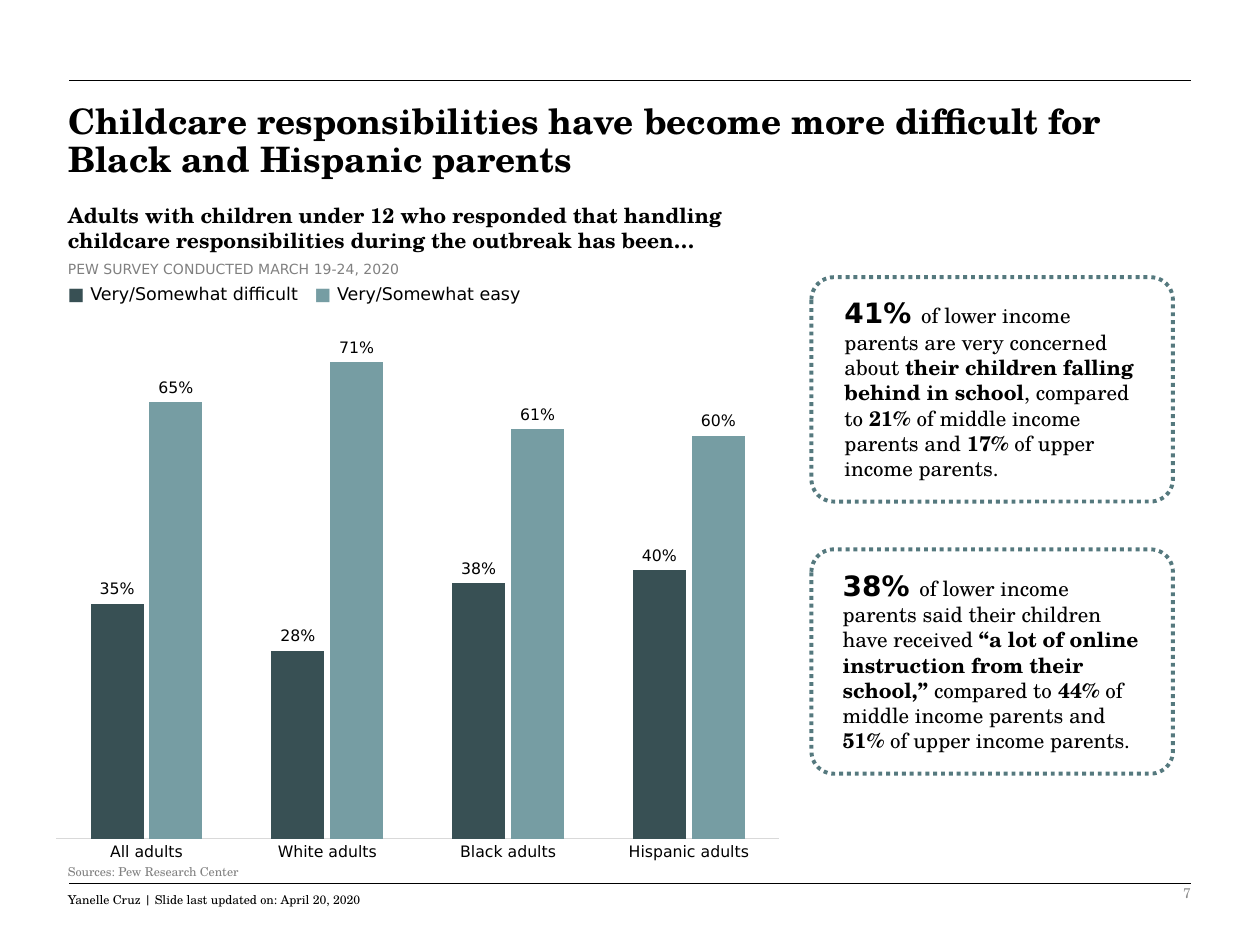
from lxml import etree
from pptx import Presentation
from pptx.chart.data import CategoryChartData
from pptx.dml.color import RGBColor
from pptx.enum.chart import XL_CHART_TYPE, XL_LABEL_POSITION, XL_TICK_MARK
from pptx.enum.dml import MSO_LINE
from pptx.enum.shapes import MSO_CONNECTOR, MSO_SHAPE
from pptx.enum.text import MSO_ANCHOR, MSO_AUTO_SIZE, PP_ALIGN
from pptx.oxml import parse_xml
from pptx.oxml.ns import nsdecls, qn
from pptx.util import Pt

COLUMNS = XL_CHART_TYPE.COLUMN_CLUSTERED
OUTSIDE = XL_LABEL_POSITION.OUTSIDE_END
NO_TICK = XL_TICK_MARK.NONE
DOTTED = MSO_LINE.ROUND_DOT
STRAIGHT = MSO_CONNECTOR.STRAIGHT
ROUNDED = MSO_SHAPE.ROUNDED_RECTANGLE
TOP, MIDDLE, BOTTOM = MSO_ANCHOR.TOP, MSO_ANCHOR.MIDDLE, MSO_ANCHOR.BOTTOM
LEFT, RIGHT = PP_ALIGN.LEFT, PP_ALIGN.RIGHT

# Theme: run styles are (font, size, colour, bold)
SERIF, SANS = "TeX Gyre Schola", "DejaVu Sans"
THEME = {
    "dark": "385054", "light": "769DA3", "border": "55797E",
    "black": "000000", "axis": "D9D9D9",
    "title": (SERIF, 20, "000000", True),
    "heading": (SERIF, 12, "000000", True),
    "body": (SERIF, 12, "000000", False),
    "figure": (SANS, 16, "000000", True),
    "survey": (SANS, 8, "808080", False),
    "legend": (SANS, 10, "000000", False),
    "dark key": (SANS, 10, "385054", True),
    "light key": (SANS, 10, "769DA3", True),
    "chart": (SANS, 9, "000000", False),
    "footer": (SERIF, 7, "000000", False),
    "source": (SERIF, 7, "808080", False),
    "number": (SERIF, 8, "8C8C8C", False),
}

# Content: runs are (text, style)
TITLE = [("Childcare responsibilities have become more difficult for "
          "Black and Hispanic parents", "title")]
HEADING = [("Adults with children under 12 who responded that handling childcare "
            "responsibilities during the outbreak has been…", "heading")]
SURVEY = [("PEW SURVEY CONDUCTED MARCH 19-24, 2020", "survey")]
LEGEND = [("■ ", "dark key"), ("Very/Somewhat difficult\t", "legend"),
          ("■ ", "light key"), ("Very/Somewhat easy", "legend")]
SOURCE = [("Sources: Pew Research Center", "source")]
FOOTER = [("Yanelle Cruz | Slide last updated on: April 20, 2020", "footer")]
NUMBER = [("7", "number")]

GROUPS = ["All adults", "White adults", "Black adults", "Hispanic adults"]
SERIES = [
    ("Series 1", "dark", [0.35, 0.28, 0.38, 0.40]),
    ("Series 2", "light", [0.65, 0.71, 0.61, 0.60]),
]
CALLOUTS = [  # text width, runs
    (183, [("41% ", "figure"),
           ("of lower income parents are very concerned about ", "body"),
           ("their children falling behind in school", "heading"),
           (", compared to ", "body"), ("21%", "heading"),
           (" of middle income parents and ", "body"), ("17%", "heading"),
           (" of upper income parents.", "body")]),
    (185, [("38% ", "figure"),
           ("of lower income parents said their children have received ", "body"),
           ("“a lot of online instruction from their school,” ", "heading"),
           ("compared to ", "body"), ("44%", "heading"),
           (" of middle income parents and ", "body"), ("51%", "heading"),
           (" of upper income parents.", "body")]),
]

# Layout, in points
EDGE = 31.7
RULE_X, RULE_YS = (39.6, 680.4), (46.1, 504.7)
CARD = {"x": 463.7, "y": 158.4, "w": 206.6, "h": 128.2, "step": 155.5, "pad": 7.2}
CHART_BOX = (EDGE, 180, 414, 312.5)
PLOT = {"x": 0, "y": 0.037, "w": 1, "h": 0.927}
LEGEND_TAB = 141


def rgb(name):
    return RGBColor.from_string(THEME.get(name, name))


def style_font(font, style):
    name, size, color, bold = THEME[style]
    for key, value in {"name": name, "size": Pt(size), "bold": bold}.items():
        setattr(font, key, value)
    font.color.rgb = rgb(color)


def place(sp, box):
    for key, value in zip(("left", "top", "width", "height"), box):
        setattr(sp, key, Pt(value))


def write(sp, runs, align=LEFT, spacing=None, tab=None, **frame):
    tf = sp.text_frame
    options = {"word_wrap": True, "auto_size": MSO_AUTO_SIZE.NONE,
               "vertical_anchor": TOP, **frame}
    for key, value in options.items():
        setattr(tf, key, value)
    p = tf.paragraphs[0]
    p.alignment, p.line_spacing = align, spacing
    if tab:
        p._p.get_or_add_pPr().append(parse_xml(
            f'<a:tabLst {nsdecls("a")}><a:tab pos="{Pt(tab)}" algn="l"/></a:tabLst>'))
    for text, style in runs:
        r = p.add_run()
        r.text = text
        style_font(r.font, style)


def add_text(s, box, runs, **options):
    write(s.shapes.add_textbox(*map(Pt, box)), runs, **options)


def add_rule(s, y):
    line = s.shapes.add_connector(STRAIGHT, Pt(RULE_X[0]), Pt(y), Pt(RULE_X[1]), Pt(y))
    line.line.color.rgb = rgb("black")
    line.line.width = Pt(0.5)
    etree.SubElement(line._element.spPr, qn("a:effectLst"))


def add_callout(s, index, width, runs):
    y = CARD["y"] + index * CARD["step"]
    card = s.shapes.add_shape(ROUNDED, *map(Pt, (CARD["x"], y, CARD["w"], CARD["h"])))
    card.adjustments[0] = 0.1
    card.shadow.inherit = False
    card.fill.background()
    card.line.color.rgb = rgb("border")
    card.line.width = Pt(2.25)
    card.line.dash_style = DOTTED
    x = CARD["x"] + (CARD["w"] - width) / 2
    add_text(s, (x, y + CARD["pad"], width, CARD["h"] - 2 * CARD["pad"]), runs)


def add_column_chart(s):
    data = CategoryChartData(number_format="0%")
    data.categories = GROUPS
    for name, _, values in SERIES:
        data.add_series(name, values)
    chart = s.shapes.add_chart(COLUMNS, *map(Pt, CHART_BOX), data).chart
    chart.has_legend = chart.has_title = False
    style_font(chart.font, "chart")

    # Axes
    cat, val = chart.category_axis, chart.value_axis
    cat.major_tick_mark = cat.minor_tick_mark = NO_TICK
    cat.format.line.color.rgb = rgb("axis")
    cat.format.line.width = Pt(0.75)
    style_font(cat.tick_labels.font, "chart")
    val.minimum_scale, val.maximum_scale = 0, 0.75
    val.has_major_gridlines = val.visible = False

    # Columns and their labels
    plot = chart.plots[0]
    plot.gap_width, plot.overlap, plot.vary_by_categories = 130, -11, False
    for series, (_, color, _) in zip(plot.series, SERIES):
        series.format.fill.solid()
        series.format.fill.fore_color.rgb = rgb(color)
        labels = series.data_labels
        for key, value in {"show_value": True, "position": OUTSIDE,
                           "number_format": "0%",
                           "number_format_is_linked": False}.items():
            setattr(labels, key, value)
        style_font(labels.font, "chart")

    # Plot area across the full chart width
    area = chart._chartSpace.chart.plotArea
    for old in area.findall(qn("c:layout")):
        area.remove(old)
    sizes = "".join(f'<c:{key} val="{value}"/>' for key, value in PLOT.items())
    area.insert(0, parse_xml(
        f'<c:layout {nsdecls("c")}><c:manualLayout><c:layoutTarget val="inner"/>'
        f'<c:xMode val="edge"/><c:yMode val="edge"/>{sizes}'
        '</c:manualLayout></c:layout>'))


def main():
    prs = Presentation()
    prs.slide_width, prs.slide_height = Pt(720), Pt(540)
    s = prs.slides.add_slide(prs.slide_layouts[5])

    # Frame and title
    for y in RULE_YS:
        add_rule(s, y)
    place(s.shapes.title, (EDGE, 56.2, 656, 50.4))
    write(s.shapes.title, TITLE, spacing=0.9)

    # Chart with its heading and legend
    add_column_chart(s)
    add_text(s, (EDGE, 112.3, 414, 36), HEADING)
    add_text(s, (EDGE, 145.4, 216.7, 17.3), SURVEY)
    add_text(s, (EDGE, 158.4, 282.2, 19.4), LEGEND, tab=LEGEND_TAB)

    # Callouts
    for i, (width, runs) in enumerate(CALLOUTS):
        add_callout(s, i, width, runs)

    # Footer
    add_text(s, (EDGE, 480.2, 342, 23.8), SOURCE, spacing=1.1,
             vertical_anchor=BOTTOM, margin_bottom=Pt(1.5))
    add_text(s, (EDGE, 505.4, 239.8, 16.6), FOOTER, spacing=1.1)
    add_text(s, (508.3, 496.1, 179.3, 28.8), NUMBER, align=RIGHT,
             vertical_anchor=MIDDLE)
    prs.save("out.pptx")


if __name__ == "__main__":
    main()
